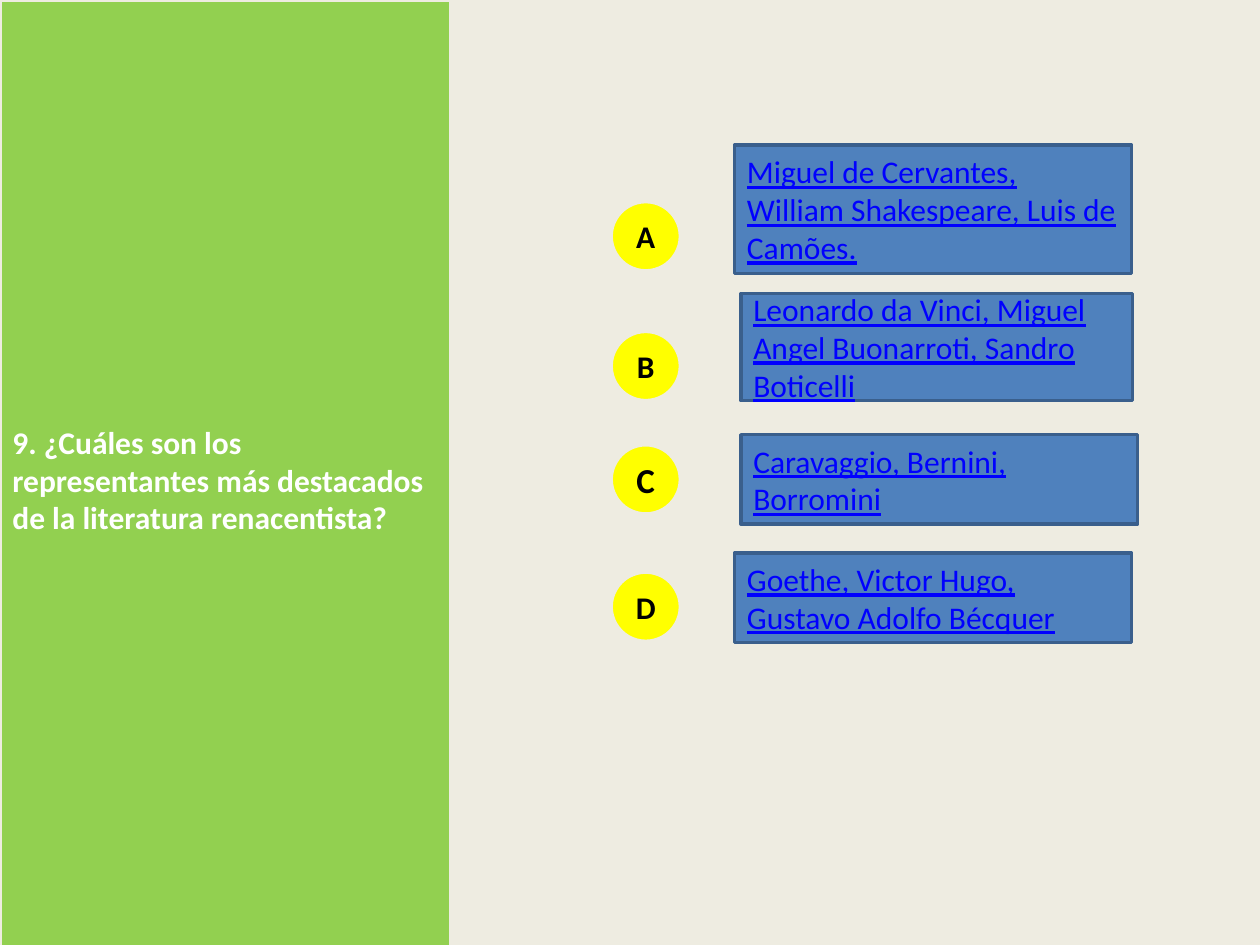
from dataclasses import dataclass

from pptx import Presentation
from pptx.dml.color import RGBColor
from pptx.enum.shapes import MSO_SHAPE
from pptx.enum.text import MSO_ANCHOR, PP_ALIGN
from pptx.util import Inches, Pt

RECT, OVAL = MSO_SHAPE.RECTANGLE, MSO_SHAPE.OVAL
MIDDLE = MSO_ANCHOR.MIDDLE
LEFT, CENTER = PP_ALIGN.LEFT, PP_ALIGN.CENTER

CREAM = RGBColor(0xEE, 0xEC, 0xE1)
GREEN = RGBColor(0x92, 0xD0, 0x50)
BLUE = RGBColor(0x4F, 0x81, 0xBD)
DARK_BLUE = RGBColor(0x3A, 0x5F, 0x8C)
LINK_BLUE = RGBColor(0x00, 0x00, 0xFF)
YELLOW = RGBColor(0xFF, 0xFF, 0x00)
WHITE = RGBColor(0xFF, 0xFF, 0xFF)
BLACK = RGBColor(0x00, 0x00, 0x00)

FONT = "Calibri"
BADGE_LEFT, BADGE_SIZE = 4.85, 0.55


@dataclass
class Answer:
    letter: str
    text: str
    left: float
    top: float
    width: float
    height: float
    badge_top: float
    letter_size: int = 18


ANSWERS = [
    Answer("A", "Miguel de Cervantes, William Shakespeare, Luis de Camões.",
           5.83, 1.15, 3.15, 1.02, 1.6),
    Answer("B", "Leonardo da Vinci, Miguel Angel Buonarroti, Sandro Boticelli",
           5.88, 2.33, 3.11, 0.85, 2.63),
    Answer("C", "Caravaggio, Bernini, Borromini",
           5.88, 3.45, 3.15, 0.71, 3.53, letter_size=20),
    Answer("D", "Goethe, Victor Hugo, Gustavo Adolfo Bécquer",
           5.83, 4.39, 3.15, 0.71, 4.54),
]


def write_text(sp, text: str, *, color: RGBColor, size: int = 18,
               bold: bool = False, underline: bool = False, align=LEFT) -> None:
    tf = sp.text_frame
    tf.word_wrap = True
    tf.vertical_anchor = MIDDLE
    p = tf.paragraphs[0]
    p.alignment = align
    r = p.add_run()
    r.text = text
    r.font.name = FONT
    r.font.size = Pt(size)
    r.font.bold = bold
    r.font.underline = underline
    r.font.color.rgb = color


def add_box(slide, kind, left: float, top: float, width: float, height: float,
            fill: RGBColor, line: RGBColor):
    sp = slide.shapes.add_shape(kind, Inches(left), Inches(top),
                                Inches(width), Inches(height))
    sp.shadow.inherit = False
    sp.fill.solid()
    sp.fill.fore_color.rgb = fill
    sp.line.color.rgb = line
    sp.line.width = Pt(2)
    return sp


def add_answer(slide, answer: Answer) -> None:
    sp = add_box(slide, RECT, answer.left, answer.top, answer.width,
                 answer.height, BLUE, DARK_BLUE)
    write_text(sp, answer.text, color=LINK_BLUE, underline=True)
    sp = add_box(slide, OVAL, BADGE_LEFT, answer.badge_top, BADGE_SIZE,
                 BADGE_SIZE, YELLOW, CREAM)
    write_text(sp, answer.letter, color=BLACK, size=answer.letter_size,
               bold=True, align=CENTER)


def main() -> None:
    prs = Presentation()
    prs.slide_width, prs.slide_height = Inches(10), Inches(7.5)
    slide = prs.slides.add_slide(prs.slide_layouts[6])
    slide.background.fill.solid()
    slide.background.fill.fore_color.rgb = CREAM

    # Question panel
    sp = add_box(slide, RECT, 0, 0, 3.58, 7.61, GREEN, CREAM)
    write_text(sp, "9. ¿Cuáles son los representantes más destacados "
                   "de la literatura renacentista?", color=WHITE, bold=True)

    # Answer options with their letter badges
    for answer in ANSWERS:
        add_answer(slide, answer)

    prs.save("out.pptx")


if __name__ == "__main__":
    main()
